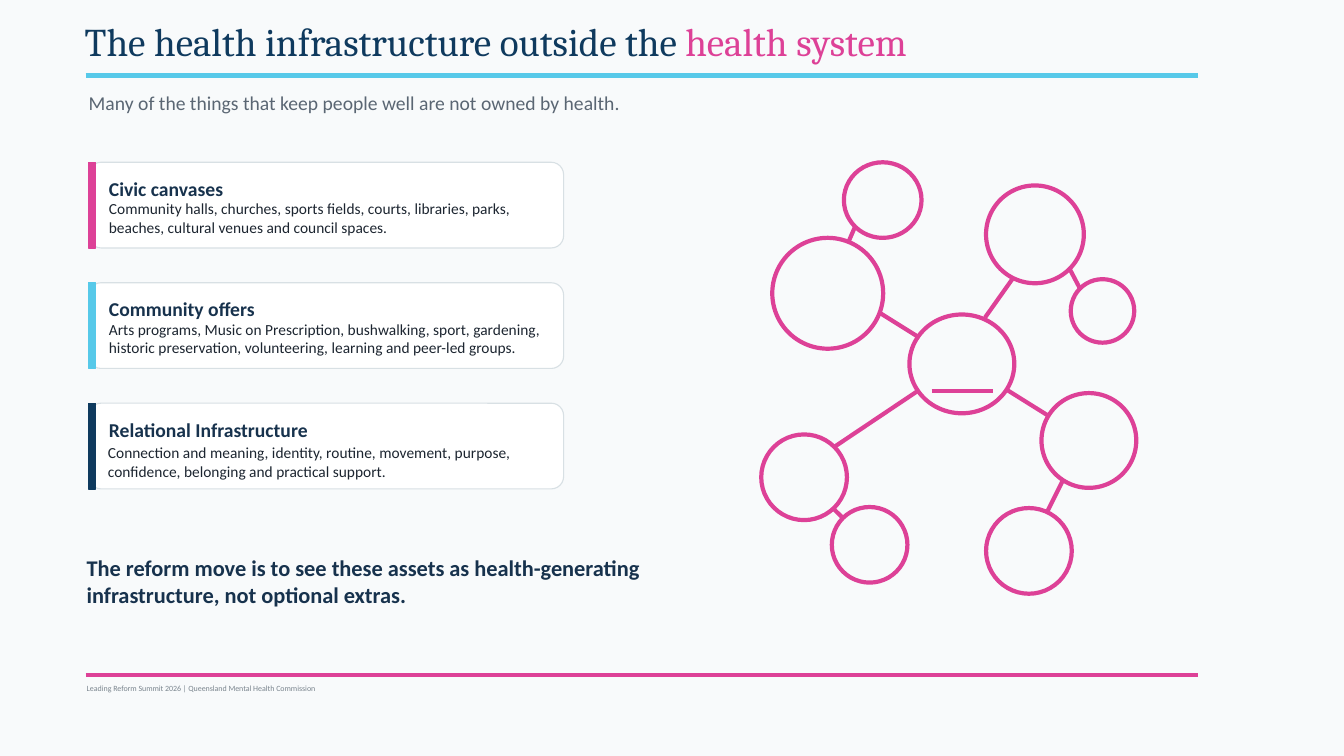
from lxml import etree
from pptx import Presentation
from pptx.dml.color import RGBColor
from pptx.enum import shapes, text
from pptx.oxml import ns
from pptx.util import Inches, Pt

PINK, SKY, NAVY = "DD4197", "57C9E9", "0F3A5E"
INK, BODY, GREY, FOOT = "17324D", "1C2530", "5A6673", "7A858E"
WHITE, CARD_EDGE, BACKGROUND = "FFFFFF", "D8E0E4", "F8FAFB"

TITLE = [("The health infrastructure outside the ", NAVY), ("health system", PINK)]
SUBTITLE = "Many of the things that keep people well are not owned by health."
CARDS = [
    ("Civic canvases",
     "Community halls, churches, sports fields, courts, libraries, parks, "
     "beaches, cultural venues and council spaces.", PINK, (1.08, 0.37)),
    ("Community offers",
     "Arts programs, Music on Prescription, bushwalking, sport, gardening, "
     "historic preservation, volunteering, learning and peer-led groups.", SKY, (1.08, 0.37)),
    ("Relational Infrastructure",
     "Connection and meaning, identity, routine, movement, purpose, "
     "confidence, belonging and practical support.", NAVY, (1.07, 0.4)),
]
MESSAGE = ("The reform move is to see these assets as health-generating "
           "infrastructure, not optional extras.")
FOOTER = "Leading Reform Summit 2026 | Queensland Mental Health Commission"

RULES = [((0.85, 0.75, 11.88, 0.75), SKY), ((0.85, 6.7, 11.88, 6.7), PINK)]
CIRCLES = [
    (10.33, 3.9, 0.94, 0.94), (9.78, 5.04, 0.85, 0.85), (9.02, 3.12, 1.04, 0.98),
    (8.37, 1.61, 0.77, 0.75), (9.78, 1.84, 0.97, 0.97), (10.62, 2.77, 0.63, 0.63),
    (7.55, 4.31, 0.85, 0.85), (8.25, 5.03, 0.75, 0.75), (7.66, 2.36, 1.1, 1.1),
]
LINKS = [
    (8.42, 2.39, 8.48, 2.25), (8.72, 3.1, 9.12, 3.35), (10.04, 2.77, 9.77, 3.15),
    (10.61, 2.67, 10.71, 2.86), (9.99, 3.87, 10.39, 4.12), (8.28, 4.43, 9.1, 3.88),
    (8.27, 5.05, 8.36, 5.14), (10.54, 4.77, 10.39, 5.07), (9.24, 3.88, 9.85, 3.88),
]
CARD_LEFT, CARD_TOP, CARD_STEP, CARD_HEIGHT = 0.88, 1.61, 1.195, 0.85


def color(value):
    return RGBColor.from_string(value)


def inches(values):
    return [Inches(value) for value in values]


def add_line(page, ends, stroke):
    line = page.shapes.add_connector(shapes.MSO_CONNECTOR.STRAIGHT, *inches(ends))
    line.line.color.rgb = color(stroke)
    line.line.width = Pt(3)
    etree.SubElement(line._element.spPr, ns.qn("a:effectLst"))


def add_figure(page, kind, place, fill, stroke, width):
    figure = page.shapes.add_shape(kind, *inches(place))
    figure.shadow.inherit = False
    if fill:
        figure.fill.solid()
        figure.fill.fore_color.rgb = color(fill)
    else:
        figure.fill.background()
    figure.line.color.rgb = color(stroke)
    figure.line.width = Pt(width)
    return figure


def add_text(page, place, words, size, ink, bold=False, anchor=text.MSO_ANCHOR.MIDDLE):
    box = page.shapes.add_textbox(*inches(place))
    frame = box.text_frame
    frame.word_wrap = True
    frame.vertical_anchor = anchor
    frame.margin_left = frame.margin_top = frame.margin_right = frame.margin_bottom = 0
    para = frame.paragraphs[0]
    para.text = words
    para.font.name = "Calibri"
    para.font.size = Pt(size)
    para.font.bold = bold
    para.font.color.rgb = color(ink)


def add_title(page):
    title = page.shapes.title
    title.left, title.top, title.width, title.height = inches((0.74, 0.17, 10.63, 0.53))
    frame = title.text_frame
    frame.auto_size = text.MSO_AUTO_SIZE.NONE
    frame.vertical_anchor = text.MSO_ANCHOR.MIDDLE
    para = frame.paragraphs[0]
    para.alignment = text.PP_ALIGN.LEFT
    para.line_spacing = 0.9
    para.font.name = "Cambria"
    para.font.size = Pt(28)
    for words, ink in TITLE:
        span = para.add_run()
        span.text = words
        span.font.color.rgb = color(ink)


def add_card(page, top, heading, detail, accent, detail_offset):
    card = add_figure(page, shapes.MSO_SHAPE.ROUNDED_RECTANGLE,
                      (CARD_LEFT, top, 4.71, CARD_HEIGHT), WHITE, CARD_EDGE, 0.8)
    card.adjustments[0] = 0.143
    add_figure(page, shapes.MSO_SHAPE.RECTANGLE,
               (CARD_LEFT, top, 0.07, CARD_HEIGHT), accent, accent, 1)
    add_text(page, (1.08, top + 0.13, 4.39, 0.26), heading, 14, INK, bold=True)
    detail_left, detail_drop = detail_offset
    add_text(page, (detail_left, top + detail_drop, 4.35, 0.46), detail, 11, BODY,
             anchor=text.MSO_ANCHOR.TOP)


def main():
    deck = Presentation()
    deck.slide_width, deck.slide_height = inches((13.33, 7.5))
    page = deck.slides.add_slide(deck.slide_layouts[5])
    page.background.fill.solid()
    page.background.fill.fore_color.rgb = color(BACKGROUND)

    add_title(page)
    for ends, stroke in RULES:
        add_line(page, ends, stroke)
    add_text(page, (0.88, 0.87, 10.21, 0.29), SUBTITLE, 14, GREY)
    for index, card in enumerate(CARDS):
        add_card(page, CARD_TOP + index * CARD_STEP, *card)
    add_text(page, (0.86, 5.32, 5.96, 0.88), MESSAGE, 16, INK, bold=True)
    for place in CIRCLES:
        add_figure(page, shapes.MSO_SHAPE.OVAL, place, None, PINK, 3)
    for ends in LINKS:
        add_line(page, ends, PINK)
    add_text(page, (0.86, 6.75, 6.5, 0.16), FOOTER, 5.7, FOOT)
    deck.save("out.pptx")


if __name__ == "__main__":
    main()
